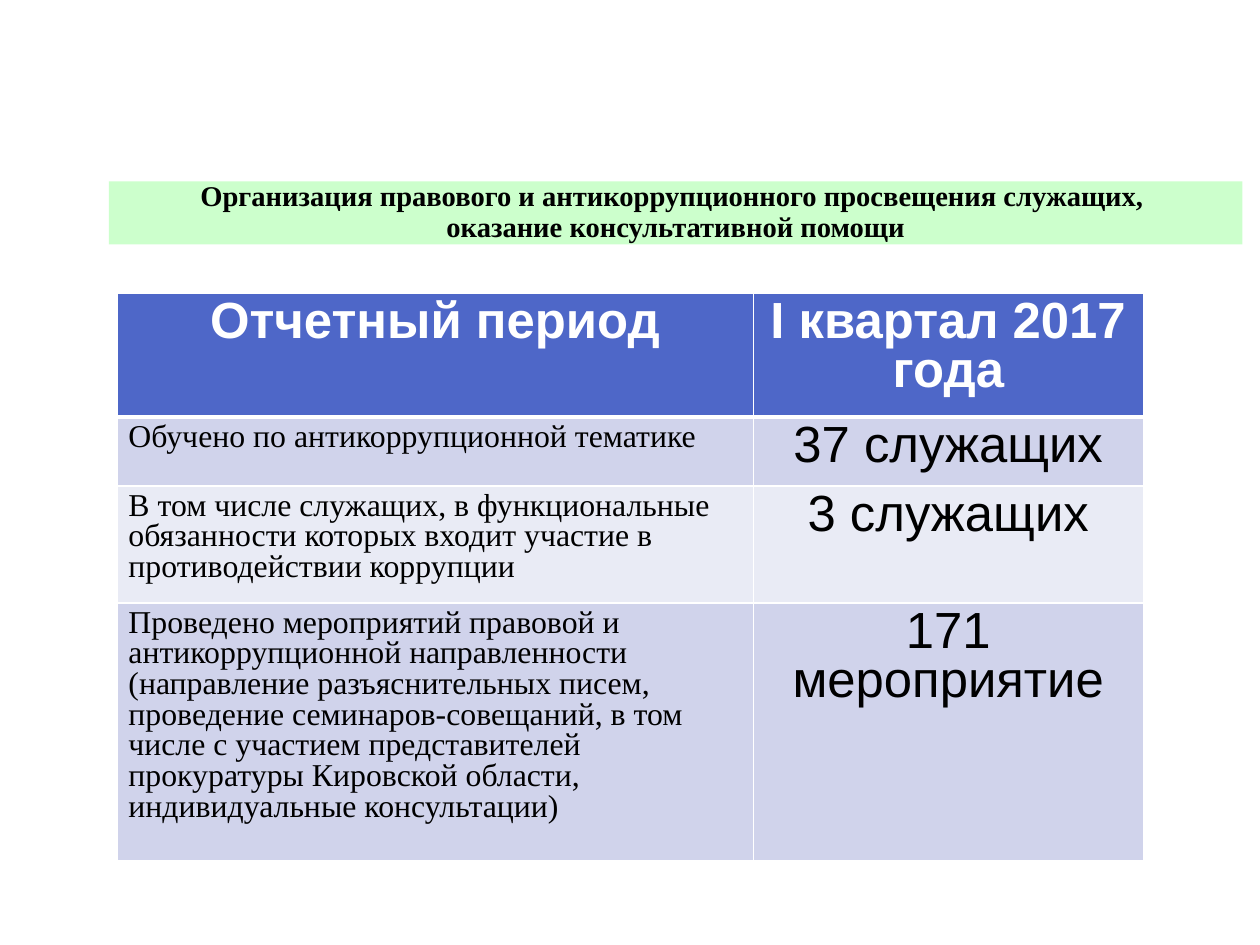
from pptx import Presentation
from pptx.dml.color import RGBColor
from pptx.enum.shapes import MSO_SHAPE
from pptx.enum.text import MSO_ANCHOR, PP_ALIGN
from pptx.oxml import parse_xml
from pptx.util import Cm, Pt

LEFT, CENTER = PP_ALIGN.LEFT, PP_ALIGN.CENTER
MIDDLE = MSO_ANCHOR.MIDDLE
RECTANGLE = MSO_SHAPE.RECTANGLE

# Content
TITLE = ("Организация правового и антикоррупционного просвещения служащих, \v"
         "оказание консультативной помощи")
ROWS = [
    ("Отчетный период", "I квартал 2017 года"),
    ("Обучено по антикоррупционной тематике", "37 служащих"),
    ("В том числе служащих, в функциональные обязанности которых входит "
     "участие в противодействии коррупции", "3 служащих"),
    ("Проведено мероприятий правовой и антикоррупционной направленности "
     "(направление разъяснительных писем, проведение семинаров-совещаний, "
     "в том числе с участием представителей прокуратуры Кировской области, "
     "индивидуальные консультации)", "171 мероприятие"),
]
COLUMN_WIDTHS = [14.14, 8.67]
ROW_HEIGHTS = [2.76, 1.53, 2.6, 5.73]

# Formats
COLORS = {"banner": "CCFFCC", "header": "4E67C8", "odd": "D0D3EB",
          "even": "E9EBF5", "text": "000000", "white": "FFFFFF"}
TITLE_FONT = {"name": "Times New Roman", "size": Pt(18), "bold": True}
HEADER_FONT = {"name": "Arial", "size": Pt(32), "bold": True}
LABEL_FONT = {"name": "Times New Roman", "size": Pt(20), "bold": False}
VALUE_FONT = {"name": "Arial", "size": Pt(32), "bold": False}
NAMESPACE = "http://schemas.openxmlformats.org/drawingml/2006/main"


def paint(target, color):
    target.fill.solid()
    target.fill.fore_color.rgb = RGBColor.from_string(COLORS[color])


def write(frame, text, font, color, alignment, spacing):
    frame.text = text
    para = frame.paragraphs[0]
    para.alignment = alignment
    para.line_spacing = spacing
    for span in para.runs:
        for name, value in font.items():
            setattr(span.font, name, value)
        span.font.color.rgb = RGBColor.from_string(COLORS[color])


def add_borders(cell, bottom_width):
    properties = cell._tc.get_or_add_tcPr()
    widths = {"lnL": 1, "lnR": 1, "lnT": 1, "lnB": bottom_width}
    for index, (side, width) in enumerate(widths.items()):
        properties.insert(index, parse_xml(
            f'<a:{side} xmlns:a="{NAMESPACE}" w="{Pt(width)}"><a:solidFill>'
            f'<a:srgbClr val="{COLORS["white"]}"/></a:solidFill></a:{side}>'))


deck = Presentation()
deck.slide_width, deck.slide_height = Cm(28), Cm(21)
page = deck.slides.add_slide(deck.slide_layouts[6])

# Title banner
banner = page.shapes.add_shape(RECTANGLE, Cm(2.42), Cm(4.03), Cm(25.19), Cm(1.4))
banner.shadow.inherit = False
banner.line.fill.background()
paint(banner, "banner")
frame = banner.text_frame
for name, value in {"margin_left": 0, "margin_right": 0, "margin_top": 0,
                    "margin_bottom": 0, "word_wrap": True,
                    "vertical_anchor": MIDDLE}.items():
    setattr(frame, name, value)
write(frame, TITLE, TITLE_FONT, "text", CENTER, 0.9)

# Results table
table = page.shapes.add_table(len(ROWS), len(COLUMN_WIDTHS), Cm(2.6), Cm(6.51),
                              Cm(sum(COLUMN_WIDTHS)), Cm(sum(ROW_HEIGHTS))).table
for column, width in zip(table.columns, COLUMN_WIDTHS):
    column.width = Cm(width)
for row, height in zip(table.rows, ROW_HEIGHTS):
    row.height = Cm(height)

for row_index, texts in enumerate(ROWS):
    is_header = row_index == 0
    fill = "header" if is_header else ("even", "odd")[row_index % 2]
    for column_index, text in enumerate(texts):
        cell = table.cell(row_index, column_index)
        font = HEADER_FONT if is_header else (LABEL_FONT, VALUE_FONT)[column_index]
        alignment = CENTER if is_header or column_index else LEFT
        paint(cell, fill)
        write(cell.text_frame, text, font, "white" if is_header else "text",
              alignment, 0.87)
        add_borders(cell, 3 if is_header else 1)

deck.save("out.pptx")
